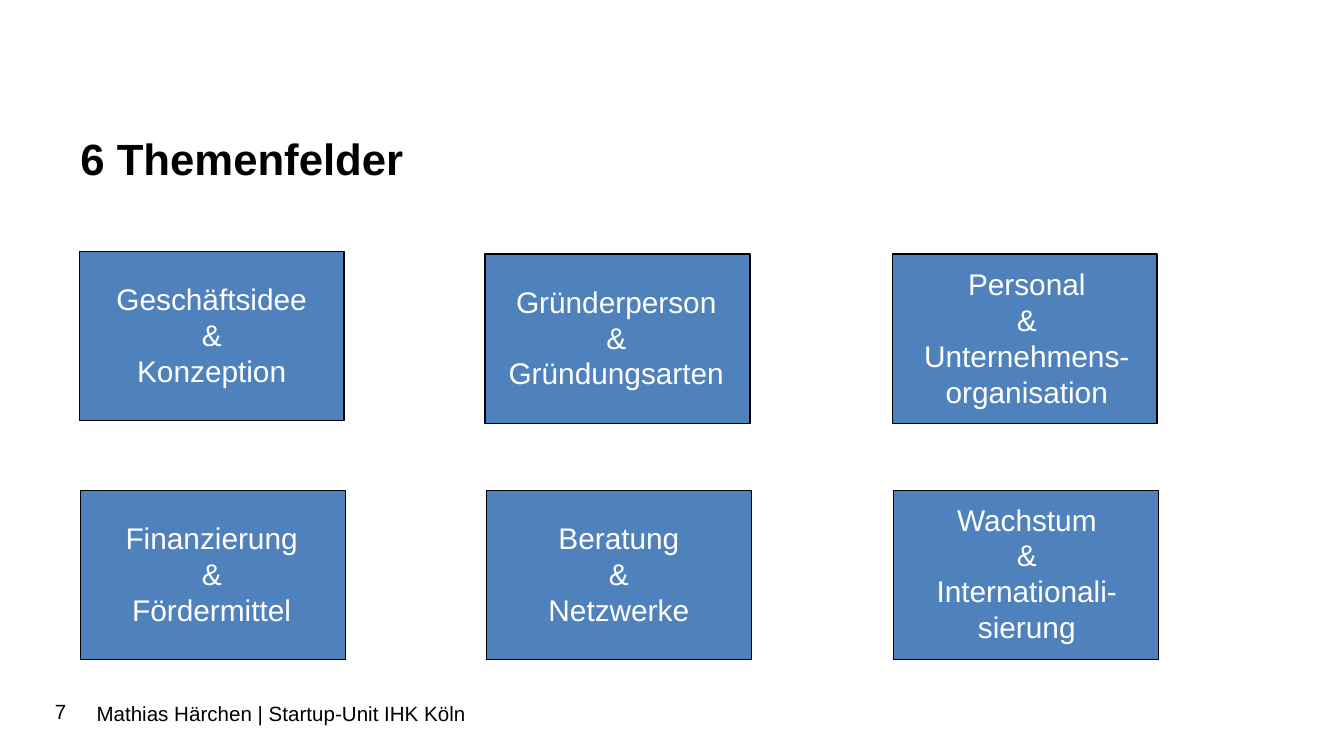
from pptx import Presentation
from pptx.dml.color import RGBColor
from pptx.enum import shapes, text
from pptx.util import Inches, Pt

BLACK = RGBColor(0, 0, 0)
WHITE = RGBColor(255, 255, 255)
BLUE = RGBColor(0x4F, 0x81, 0xBD)

TITLE = "6 Themenfelder"
PAGE_NUMBER = "7"
FOOTER = "Mathias Härchen | Startup-Unit IHK Köln"

TOPICS = [
    [
        ("Geschäftsidee\v&\vKonzeption", 1.87, (0.65, 2.04, 1.85, 0.91)),
        ("Gründerperson &\nGründungsarten", 1.89, (3.64, 2.06, 1.89, 0.91)),
        ("Personal\v&\nUnternehmens-\vorganisation", 1.89, (6.65, 1.93, 1.98, 1.18)),
    ],
    [
        ("Finanzierung\v&\vFördermittel", 3.65, (0.65, 3.82, 1.85, 0.91)),
        ("Beratung\n&\nNetzwerke", 3.65, (3.67, 3.82, 1.87, 0.91)),
        ("Wachstum\v&\vInternationali-sierung", 3.65, (6.65, 3.68, 1.98, 1.18)),
    ],
]
TILE_LEFTS = (0.59, 3.61, 6.64)
ROW_SHIFT = 0.01
TILE_WIDTH, TILE_HEIGHT = 1.97, 1.26


def add_tile(page, left, top):
    tile = page.shapes.add_shape(
        shapes.MSO_SHAPE.RECTANGLE,
        *map(Inches, (left, top, TILE_WIDTH, TILE_HEIGHT)),
    )
    tile.shadow.inherit = False
    tile.fill.solid()
    tile.fill.fore_color.rgb = BLUE
    tile.line.color.rgb = BLACK
    tile.line.width = Pt(0.75)


def add_text(page, content, area, size, color=BLACK, bold=False,
             align=text.PP_ALIGN.LEFT, anchor=text.MSO_ANCHOR.TOP):
    frame = page.shapes.add_textbox(*map(Inches, area)).text_frame
    frame.word_wrap = True
    frame.vertical_anchor = anchor
    frame.text = content
    for para in frame.paragraphs:
        para.alignment = align
        for span in para.runs:
            span.font.name = "Arial"
            span.font.size = Pt(size)
            span.font.bold = bold
            span.font.color.rgb = color


def main():
    deck = Presentation()
    deck.slide_width = Inches(10)
    deck.slide_height = deck.slide_width * 9 // 16
    page = deck.slides.add_slide(deck.slide_layouts[6])

    add_text(page, TITLE, (0.5, 0.93, 9, 0.47), 23.4, bold=True)
    for row, topics in enumerate(TOPICS):
        for left, (label, top, area) in zip(TILE_LEFTS, topics):
            add_tile(page, left + row * ROW_SHIFT, top)
            add_text(page, label, area, 16, WHITE, align=text.PP_ALIGN.CENTER)

    middle = text.MSO_ANCHOR.MIDDLE
    add_text(page, PAGE_NUMBER, (0.31, 5.21, 0.39, 0.17), 11, anchor=middle)
    add_text(page, FOOTER, (0.62, 5.22, 7.48, 0.17), 11, anchor=middle)
    deck.save("out.pptx")


if __name__ == "__main__":
    main()
